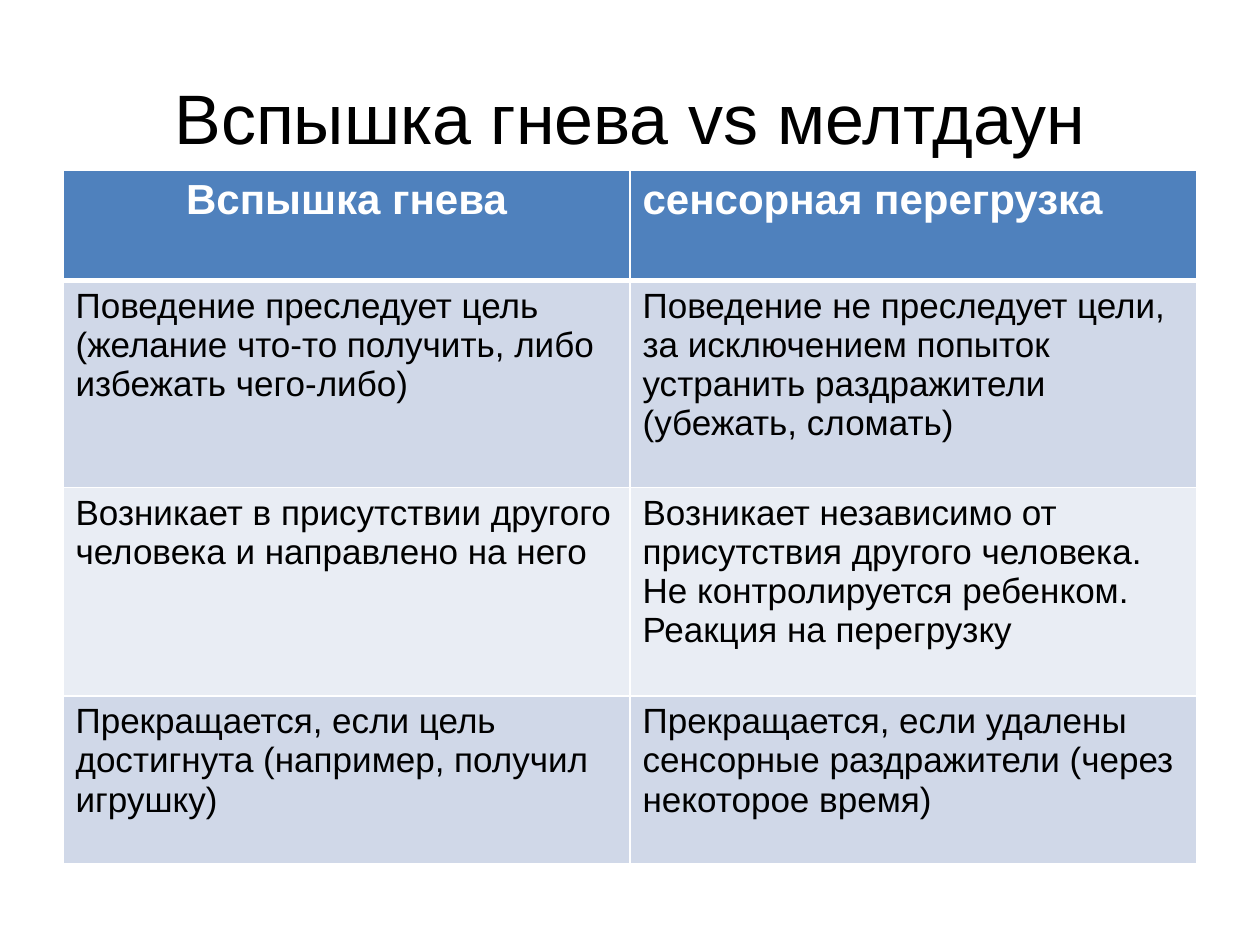
from dataclasses import dataclass

from lxml.etree import SubElement
from pptx import Presentation
from pptx.dml.color import RGBColor
from pptx.enum.text import MSO_ANCHOR, PP_ALIGN
from pptx.oxml.ns import qn
from pptx.util import Pt


@dataclass(frozen=True)
class Theme:
    font: str = "Arial"
    title_size: int = 40
    head_size: int = 24
    body_size: int = 20
    text: str = "000000"
    white: str = "FFFFFF"
    head_fill: str = "4F81BD"
    bands: tuple[str, str] = ("D0D8E8", "E9EDF4")
    thin: int = 1
    thick: int = 3


@dataclass(frozen=True)
class Row:
    height: float
    tantrum: str
    overload: str


THEME = Theme()
LEFT, WIDTH = 36, 648
TITLE = "Вспышка гнева vs мелтдаун"
ROWS = [
    Row(63, "Вспышка гнева", "сенсорная перегрузка"),
    Row(118.5,
        "Поведение преследует цель (желание что-то получить, либо избежать чего-либо)",
        "Поведение не преследует цели, за исключением попыток устранить "
        "раздражители (убежать, сломать)"),
    Row(119,
        "Возникает в присутствии другого человека и направлено на него",
        "Возникает независимо от присутствия другого человека. "
        "Не контролируется ребенком.\nРеакция на перегрузку"),
    Row(96,
        "Прекращается, если цель достигнута (например, получил игрушку)",
        "Прекращается, если удалены сенсорные раздражители (через некоторое время)"),
]


def write(tf, text: str, size: int, color: str, bold: bool = False,
          align: PP_ALIGN = PP_ALIGN.LEFT) -> None:
    """Fill a text frame, one paragraph per line of text."""
    tf.text = text
    tf.word_wrap = True
    fmt = {"name": THEME.font, "size": Pt(size), "bold": bold}
    for p in tf.paragraphs:
        p.alignment = align
        for r in p.runs:
            for key, value in fmt.items():
                setattr(r.font, key, value)
            r.font.color.rgb = RGBColor.from_string(color)


def set_borders(cell, top: int, bottom: int) -> None:
    widths = {"L": THEME.thin, "R": THEME.thin, "T": top, "B": bottom}
    tcPr = cell._tc.get_or_add_tcPr()
    for i, (side, width) in enumerate(widths.items()):
        ln = SubElement(tcPr, qn(f"a:ln{side}"), w=str(Pt(width)))
        fill = SubElement(ln, qn("a:solidFill"))
        SubElement(fill, qn("a:srgbClr"), val=THEME.white)
        tcPr.insert(i, ln)  # borders come before the cell fill


def add_title(s) -> None:
    tf = s.shapes.add_textbox(Pt(LEFT), Pt(21.6), Pt(WIDTH), Pt(90)).text_frame
    tf.vertical_anchor = MSO_ANCHOR.MIDDLE
    write(tf, TITLE, THEME.title_size, THEME.text, align=PP_ALIGN.CENTER)


def add_comparison(s, rows: list[Row]) -> None:
    height = sum(row.height for row in rows)
    table = s.shapes.add_table(len(rows), 2, Pt(LEFT), Pt(97.2),
                               Pt(WIDTH), Pt(height)).table
    for i, row in enumerate(rows):
        table.rows[i].height = Pt(row.height)
        head = i == 0
        fill = THEME.head_fill if head else THEME.bands[(i - 1) % 2]
        for j, text in enumerate((row.tantrum, row.overload)):
            cell = table.cell(i, j)
            cell.fill.solid()
            cell.fill.fore_color.rgb = RGBColor.from_string(fill)
            set_borders(cell, top=THEME.thick if i == 1 else THEME.thin,
                        bottom=THEME.thick if head else THEME.thin)
            write(cell.text_frame, text,
                  THEME.head_size if head else THEME.body_size,
                  THEME.white if head else THEME.text, bold=head,
                  align=PP_ALIGN.CENTER if head and j == 0 else PP_ALIGN.LEFT)


def main() -> None:
    prs = Presentation()
    prs.slide_width, prs.slide_height = Pt(720), Pt(540)
    s = prs.slides.add_slide(prs.slide_layouts[6])
    add_title(s)
    add_comparison(s, ROWS)
    prs.save("out.pptx")


if __name__ == "__main__":
    main()
